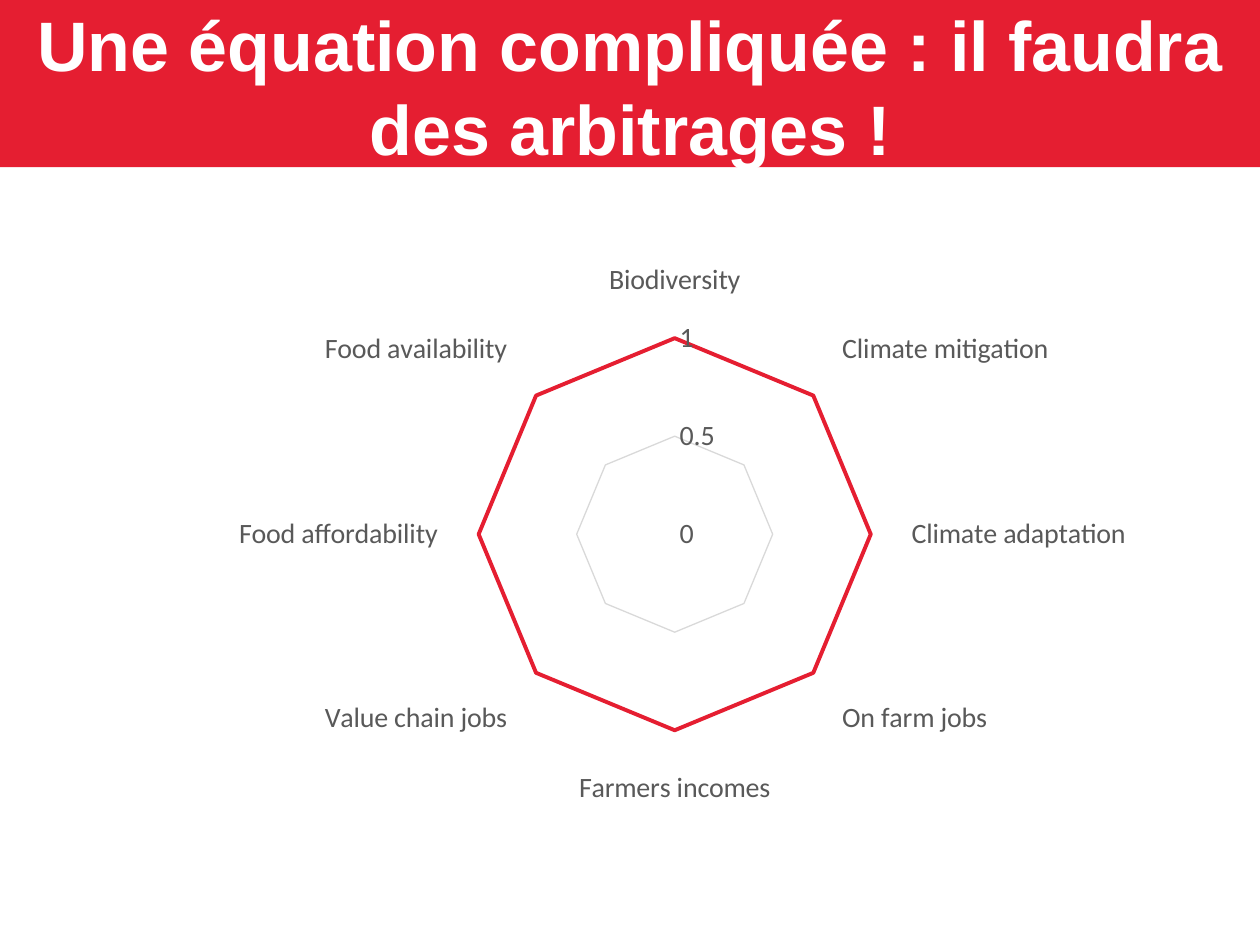
import pptx
import pptx.util
import pptx.chart.data
import pptx.dml.color
import pptx.enum.chart
import pptx.enum.shapes
import pptx.enum.text

Pt = pptx.util.Pt
RGBColor = pptx.dml.color.RGBColor

RED = RGBColor(0xE5, 0x1E, 0x31)
WHITE = RGBColor(0xFF, 0xFF, 0xFF)
GREY = RGBColor(0x59, 0x59, 0x59)
LIGHT = RGBColor(0xD9, 0xD9, 0xD9)


class Deck:
    title_font = "Arial"
    chart_font = "Calibri"

    def __init__(self, width, height):
        self.prs = pptx.Presentation()
        self.prs.slide_width = Pt(width)
        self.prs.slide_height = Pt(height)
        self.s = self.prs.slides.add_slide(self.prs.slide_layouts[6])

    def band(self, *box):
        sp = self.s.shapes.add_shape(
            pptx.enum.shapes.MSO_SHAPE.RECTANGLE, *map(Pt, box))
        sp.shadow.inherit = False
        sp.fill.solid()
        sp.fill.fore_color.rgb = RED
        sp.line.fill.background()

    def title(self, text, *box):
        tf = self.s.shapes.add_textbox(*map(Pt, box)).text_frame
        tf.word_wrap = True
        tf.vertical_anchor = pptx.enum.text.MSO_ANCHOR.MIDDLE
        p = tf.paragraphs[0]
        p.alignment = pptx.enum.text.PP_ALIGN.CENTER
        r = p.add_run()
        r.text = text
        r.font.name = self.title_font
        r.font.size = Pt(40)
        r.font.bold = True
        r.font.color.rgb = WHITE

    def style_line(self, line, color, width):
        line.color.rgb = color
        line.width = Pt(width)

    def style_axis(self, axis):
        axis.major_tick_mark = pptx.enum.chart.XL_TICK_MARK.NONE
        axis.minor_tick_mark = pptx.enum.chart.XL_TICK_MARK.NONE
        font = axis.tick_labels.font
        font.name = self.chart_font
        font.size = Pt(16)
        font.color.rgb = GREY

    def radar(self, categories, values, *box):
        data = pptx.chart.data.CategoryChartData()
        data.categories = categories
        data.add_series("Series 1", values)
        chart = self.s.shapes.add_chart(
            pptx.enum.chart.XL_CHART_TYPE.RADAR, *map(Pt, box), data).chart
        chart.has_legend = False
        chart.has_title = False
        chart.font.name = self.chart_font
        chart.font.size = Pt(16)

        cat, val = chart.category_axis, chart.value_axis
        self.style_axis(cat)
        self.style_axis(val)
        cat.has_major_gridlines = False
        self.style_line(cat.format.line, LIGHT, 0.75)
        val.format.line.fill.background()
        val.has_major_gridlines = True
        self.style_line(val.major_gridlines.format.line, LIGHT, 0.75)
        val.minimum_scale, val.maximum_scale, val.major_unit = 0, 1, 0.5
        val.tick_labels.number_format = "General"
        val.tick_labels.number_format_is_linked = False

        plot = chart.plots[0]
        plot.vary_by_categories = False
        series = plot.series[0]
        series.smooth = False
        series.marker.style = pptx.enum.chart.XL_MARKER_STYLE.NONE
        self.style_line(series.format.line, RED, 2.25)


def main():
    deck = Deck(720, 540)
    deck.band(0, 0, 720, 95.5)
    deck.title("Une équation compliquée : il faudra des arbitrages !",
               9, 3.6, 702, 90)
    goals = ["Biodiversity", "Climate mitigation", "Climate adaptation",
             "On farm jobs", "Farmers incomes", "Value chain jobs",
             "Food affordability", "Food availability"]
    deck.radar(goals, [1] * len(goals), 126, 122.4, 527.8, 365.8)
    deck.prs.save("out.pptx")


if __name__ == "__main__":
    main()
